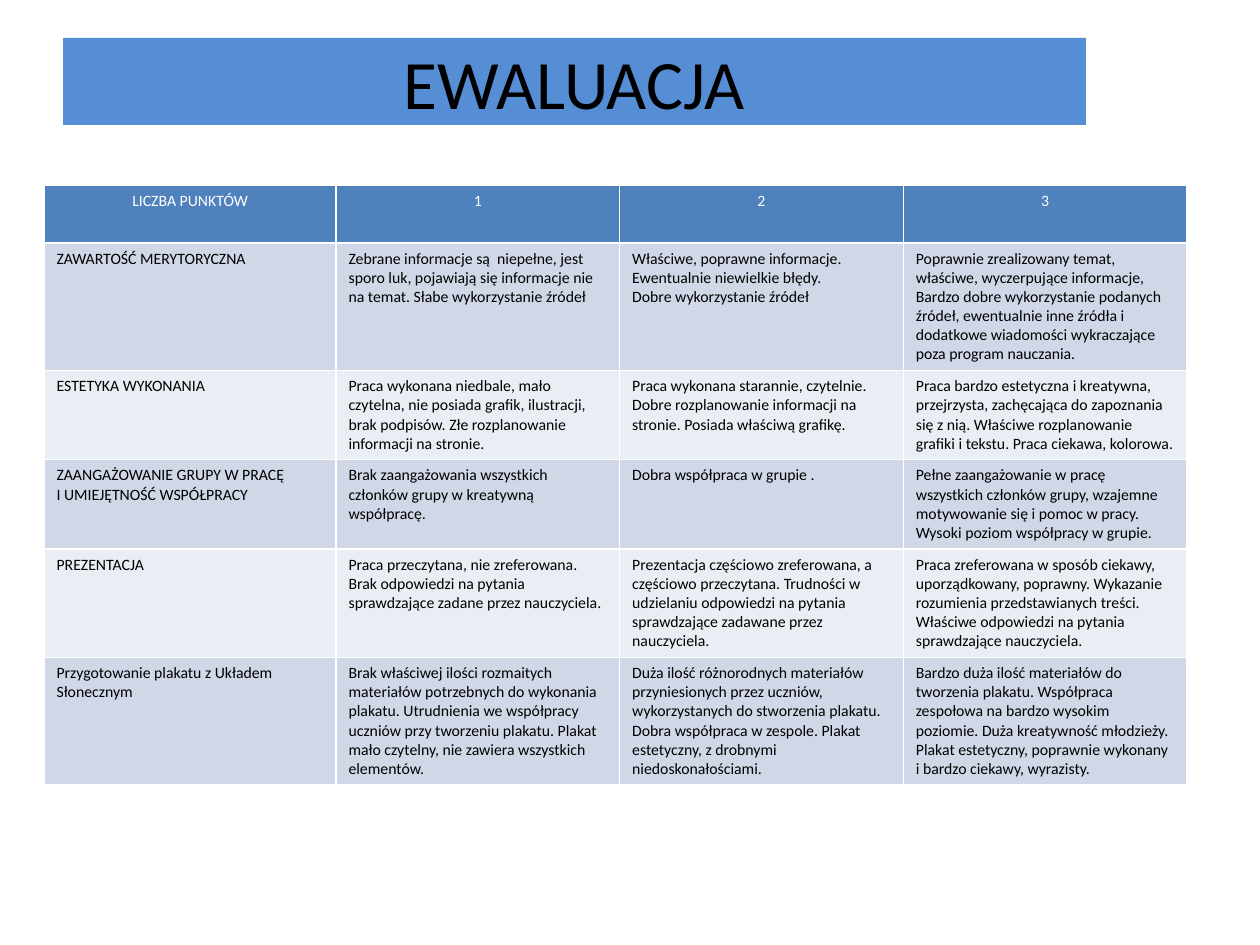
from pptx import Presentation
from pptx.dml.color import RGBColor
from pptx.enum.text import MSO_ANCHOR, MSO_AUTO_SIZE, PP_ALIGN
from pptx.util import Pt

CENTER, LEFT = PP_ALIGN.CENTER, PP_ALIGN.LEFT
MIDDLE = MSO_ANCHOR.MIDDLE
NO_AUTOFIT = MSO_AUTO_SIZE.NONE
TITLE_ONLY = 5

EMU_PER_INCH, PX_PER_INCH = 914400, 126
FONT = "Calibri"
BLACK, WHITE = "000000", "FFFFFF"
BANNER_FILL, HEADER_FILL = "558ED5", "4F81BD"
BAND_FILLS = ("D0D8E8", "E9EDF4")

HEADER = ["LICZBA PUNKTÓW", "1", "2", "3"]
CRITERIA = [
    ["ZAWARTOŚĆ MERYTORYCZNA",
     "Zebrane informacje są  niepełne, jest sporo luk, pojawiają się informacje nie na temat. "
     "Słabe wykorzystanie źródeł",
     "Właściwe, poprawne informacje. Ewentualnie niewielkie błędy.\nDobre wykorzystanie źródeł",
     "Poprawnie zrealizowany temat, właściwe, wyczerpujące informacje, Bardzo dobre "
     "wykorzystanie podanych źródeł, ewentualnie inne źródła i dodatkowe wiadomości "
     "wykraczające poza program nauczania."],
    ["ESTETYKA WYKONANIA",
     "Praca wykonana niedbale, mało czytelna, nie posiada grafik, ilustracji, brak podpisów. "
     "Złe rozplanowanie informacji na stronie.",
     "Praca wykonana starannie, czytelnie. Dobre rozplanowanie informacji na stronie. "
     "Posiada właściwą grafikę.",
     "Praca bardzo estetyczna i kreatywna, przejrzysta, zachęcająca do zapoznania się z nią. "
     "Właściwe rozplanowanie grafiki i tekstu. Praca ciekawa, kolorowa."],
    ["ZAANGAŻOWANIE GRUPY W PRACĘ\nI UMIEJĘTNOŚĆ WSPÓŁPRACY",
     "Brak zaangażowania wszystkich członków grupy w kreatywną współpracę.",
     "Dobra współpraca w grupie .",
     "Pełne zaangażowanie w pracę wszystkich członków grupy, wzajemne motywowanie się "
     "i pomoc w pracy. Wysoki poziom współpracy w grupie."],
    ["PREZENTACJA",
     "Praca przeczytana, nie zreferowana. Brak odpowiedzi na pytania sprawdzające zadane "
     "przez nauczyciela.",
     "Prezentacja częściowo zreferowana, a częściowo przeczytana. Trudności w udzielaniu "
     "odpowiedzi na pytania sprawdzające zadawane przez nauczyciela.",
     "Praca zreferowana w sposób ciekawy, uporządkowany, poprawny. Wykazanie rozumienia "
     "przedstawianych treści. Właściwe odpowiedzi na pytania sprawdzające nauczyciela."],
    ["Przygotowanie plakatu z Układem Słonecznym",
     "Brak właściwej ilości rozmaitych materiałów potrzebnych do wykonania plakatu. "
     "Utrudnienia we współpracy uczniów przy tworzeniu plakatu. Plakat mało czytelny, "
     "nie zawiera wszystkich elementów.",
     "Duża ilość różnorodnych materiałów przyniesionych przez uczniów, wykorzystanych do "
     "stworzenia plakatu.\nDobra współpraca w zespole. Plakat estetyczny, z drobnymi "
     "niedoskonałościami.",
     "Bardzo duża ilość materiałów do tworzenia plakatu. Współpraca zespołowa na bardzo "
     "wysokim poziomie. Duża kreatywność młodzieży. Plakat estetyczny, poprawnie wykonany "
     "i bardzo ciekawy, wyrazisty."],
]


def px(length):
    return round(length * EMU_PER_INCH / PX_PER_INCH)


def paint(fill, color):
    fill.solid()
    fill.fore_color.rgb = RGBColor.from_string(color)


def write(frame, text, size, color, align):
    frame.text = text
    for para in frame.paragraphs:
        para.alignment = align
        para.font.name = FONT
        para.font.size = Pt(size)
        para.font.bold = False
        para.font.color.rgb = RGBColor.from_string(color)


def place_title(page, box, text):
    title = page.shapes.title
    title.left, title.top, title.width, title.height = map(px, box)
    paint(title.fill, BANNER_FILL)
    frame = title.text_frame
    frame.auto_size = NO_AUTOFIT
    frame.vertical_anchor = MIDDLE
    write(frame, text, 39.6, BLACK, CENTER)


def place_rubric(page, box, label_width, header_height, row_height):
    rows = [HEADER] + CRITERIA
    left, top, width, height = box
    holder = page.shapes.add_table(len(rows), len(HEADER), *map(px, box))
    table = holder.table

    # The label column is wider; the score columns share the rest
    score_width = (width - label_width) / (len(HEADER) - 1)
    for index, column in enumerate(table.columns):
        column.width = px(score_width if index else label_width)

    # Minimum row heights; rows grow with their text
    for index, row in enumerate(table.rows):
        row.height = px(row_height if index else header_height)
    holder.height = px(height)

    for row_index, texts in enumerate(rows):
        if row_index == 0:
            fill, color, align = HEADER_FILL, WHITE, CENTER
        else:
            fill, color, align = BAND_FILLS[(row_index - 1) % 2], BLACK, LEFT
        for column_index, text in enumerate(texts):
            cell = table.cell(row_index, column_index)
            paint(cell.fill, fill)
            write(cell.text_frame, text, 9, color, align)


def main():
    deck = Presentation()
    deck.slide_width, deck.slide_height = px(1260), px(945)
    page = deck.slides.add_slide(deck.slide_layouts[TITLE_ONLY])
    place_title(page, (63, 38, 1023, 87), "EWALUACJA")
    place_rubric(page, (44, 185, 1143, 612), label_width=292, header_height=58, row_height=52)
    deck.save("out.pptx")


if __name__ == "__main__":
    main()
